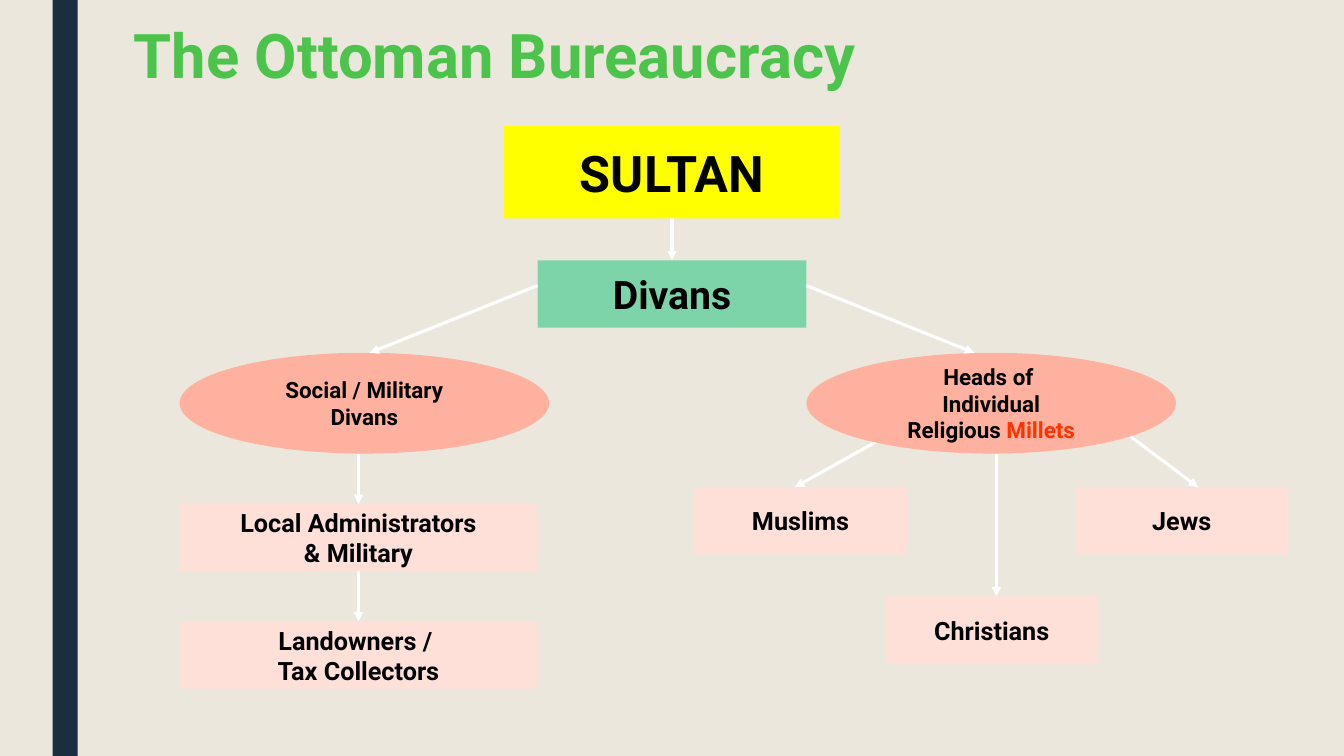
from lxml.etree import SubElement
from pptx import Presentation
from pptx.dml.color import RGBColor
from pptx.enum.shapes import MSO_CONNECTOR as Link, MSO_SHAPE as Kind
from pptx.enum.text import MSO_ANCHOR as Anchor, PP_ALIGN as Align
from pptx.oxml.ns import qn
from pptx.util import Pt

PX = 9525
WIDE, HIGH = 1280, 720
ROSE, CORAL = "FFE0D9", "FFB19F"
TOP, BOTTOM = 0, 2


def px(*nums):
    return [round(n * PX) for n in nums]


def color(fmt, code):
    fmt.rgb = RGBColor.from_string(code)


def paint(fill, code):
    fill.solid()
    color(fill.fore_color, code)


def write(frame, text, size=18, ink="000000", align=Align.CENTER,
          wrap=False, space=None, tail="", accent=None):
    """Fill a frame; tail is added to the last line in the accent colour."""
    frame.word_wrap = wrap
    frame.vertical_anchor = Anchor.MIDDLE
    para = frame.paragraphs[0]
    para.alignment = align
    if space:
        para.line_spacing = space
    lines = text.split("\n")
    parts = [(line, ink) for line in lines] + ([(tail, accent)] if tail else [])
    for i, (part, code) in enumerate(parts):
        if 0 < i < len(lines):
            para.add_line_break()
        run = para.add_run()
        run.text = part
        run.font.name = "Roboto"
        run.font.size = Pt(size)
        run.font.bold = True
        color(run.font.color, code)


def block(slide, at, fill, text="", kind=Kind.RECTANGLE, **style):
    shape = slide.shapes.add_shape(kind, *px(*at))
    shape.shadow.inherit = False
    paint(shape.fill, fill)
    shape.line.fill.background()
    if text:
        write(shape.text_frame, text, **style)
    return shape


def oval(slide, left, text, **style):
    return block(slide, (left, 336, 352, 96), CORAL, text, Kind.OVAL, size=16, **style)


def arrow(slide, start, end):
    line = slide.shapes.add_connector(Link.STRAIGHT, *px(*start, *end))
    line.line.width = Pt(2.25)
    color(line.line.color, "FFFFFF")
    SubElement(line.line._get_or_add_ln(), qn("a:tailEnd"), type="triangle")
    SubElement(line._element.spPr, qn("a:effectLst"))
    return line


def join(slide, upper, lower):
    """Run an arrow straight down between two rectangles."""
    line = arrow(slide, (0, 0), (0, 0))
    line.begin_connect(upper, BOTTOM)
    line.end_connect(lower, TOP)


def main():
    deck = Presentation()
    deck.slide_width, deck.slide_height = px(WIDE, HIGH)
    slide = deck.slides.add_slide(deck.slide_layouts[6])
    paint(slide.background.fill, "EBE7DD")

    block(slide, (50, 0, 24, HIGH), "1A2E40")
    arrow(slide, (843, 416), (757, 464))
    title = slide.shapes.add_textbox(*px(118, 16, 1130, 80))
    write(title.text_frame, "The Ottoman Bureaucracy", size=44, ink="4CC44C",
          align=Align.LEFT, wrap=True, space=0.89)

    sultan = block(slide, (480, 120, 320, 88), "FFFF00", "SULTAN", size=36)
    divans = block(slide, (512, 248, 256, 64), "7CD4A8", "Divans", size=28)
    oval(slide, 171, "Social / Military\nDivans")
    oval(slide, 768, "Heads of \nIndividual\nReligious ", tail="Millets", accent="FF3300")

    local, owners = [
        block(slide, (171, top, 341, 64), ROSE, text)
        for top, text in ((480, "Local Administrators\n& Military"),
                          (592, "Landowners / \nTax Collectors"))]
    for left, top, faith in ((661, 464, "Muslims"), (1024, 464, "Jews"),
                             (843, 568, "Christians")):
        block(slide, (left, top, 203, 64), ROSE, faith)

    join(slide, sultan, divans)
    arrow(slide, (512, 272), (352, 336))
    arrow(slide, (768, 272), (928, 336))
    arrow(slide, (341.5, 432), (341.5, 480)).end_connect(local, TOP)
    join(slide, local, owners)
    arrow(slide, (1077, 416), (1141, 464))
    arrow(slide, (949, 432), (949, 568))

    deck.save("out.pptx")


if __name__ == "__main__":
    main()
